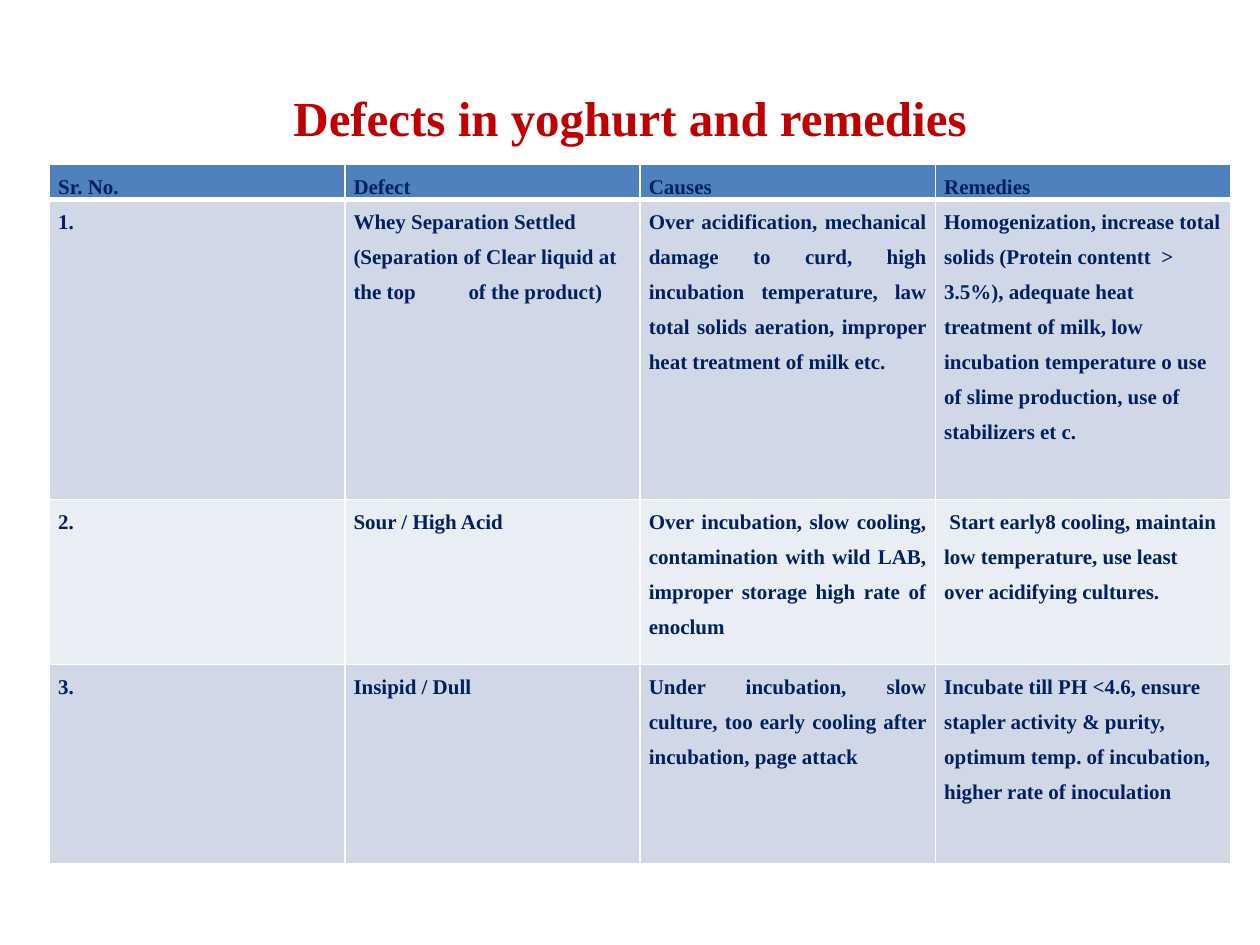
from typing import NamedTuple

from lxml import etree
from pptx import Presentation
from pptx import util as u
from pptx.dml.color import RGBColor
from pptx.enum import text
from pptx.oxml.ns import qn

COLORS = {
    "title": "C00000",
    "text": "002060",
    "header": "4F81BD",
    "band_dark": "D0D8E8",
    "band_light": "E9EDF4",
    "border": "FFFFFF",
}
FONT = "Times New Roman"
COLUMN_WIDTH = 168.75
TAB_STOP = 65.7


class TableRow(NamedTuple):
    height: float
    fill: str
    number: str
    defect: str
    causes: str
    remedies: str


ROWS = [
    TableRow(19.4, "header", "Sr. No.", "Defect", "Causes", "Remedies"),
    TableRow(
        171.4, "band_dark", "1.",
        "Whey Separation Settled (Separation of Clear liquid at the top\tof the product)",
        "Over acidification, mechanical damage to curd, high incubation temperature, "
        "law total solids aeration, improper heat treatment of milk etc. ",
        "Homogenization, increase total solids (Protein contentt  > 3.5%), adequate heat "
        "treatment of milk, low incubation temperature o use of slime production, "
        "use of stabilizers et c.",
    ),
    TableRow(
        94.3, "band_light", "2.", "Sour / High Acid",
        "Over incubation, slow cooling, contamination with wild LAB, improper storage "
        "high rate of enoclum ",
        " Start early8 cooling, maintain low temperature, use least over acidifying cultures.",
    ),
    TableRow(
        113.8, "band_dark", "3.", "Insipid / Dull",
        "Under incubation, slow culture, too early cooling after incubation, page attack",
        "Incubate till PH <4.6, ensure stapler activity & purity, optimum temp. of "
        "incubation, higher rate of inoculation",
    ),
]
CAUSES_COLUMN = 2


def format_runs(paragraph, size: float, color: str) -> None:
    for run in paragraph.runs:
        run.font.name = FONT
        run.font.size = u.Pt(size)
        run.font.bold = True
        run.font.color.rgb = RGBColor.from_string(COLORS[color])


def add_tab_stop(paragraph, position: float) -> None:
    tab_list = etree.SubElement(paragraph._p.get_or_add_pPr(), qn("a:tabLst"))
    etree.SubElement(tab_list, qn("a:tab"), pos=str(u.Pt(position)), algn="l")


def set_borders(cell, widths: dict[str, float]) -> None:
    properties = cell._tc.get_or_add_tcPr()
    for side, width in widths.items():
        line = etree.SubElement(properties, qn(f"a:ln{side}"), w=str(u.Pt(width)))
        fill = etree.SubElement(line, qn("a:solidFill"))
        etree.SubElement(fill, qn("a:srgbClr"), val=COLORS["border"])


def fill_cell(cell, content: str, fill: str, justified: bool) -> None:
    cell.margin_left = cell.margin_right = u.Pt(5)
    cell.margin_top = cell.margin_bottom = u.Pt(0)
    cell.fill.solid()
    cell.fill.fore_color.rgb = RGBColor.from_string(COLORS[fill])
    paragraph = cell.text_frame.paragraphs[0]
    paragraph.text = content
    paragraph.line_spacing = 1.5
    paragraph.alignment = text.PP_ALIGN.JUSTIFY if justified else text.PP_ALIGN.LEFT
    if "\t" in content:
        add_tab_stop(paragraph, TAB_STOP)
    format_runs(paragraph, 12, "text")


def add_title(slide, content: str) -> None:
    title = slide.shapes.title
    title.left, title.top = u.Pt(36), u.Pt(21.6)
    title.width, title.height = u.Pt(648), u.Pt(90)
    title.text_frame.text = content
    title.text_frame.vertical_anchor = text.MSO_ANCHOR.MIDDLE
    paragraph = title.text_frame.paragraphs[0]
    paragraph.alignment = text.PP_ALIGN.CENTER
    format_runs(paragraph, 28, "title")


def add_defect_table(slide, rows: list[TableRow]) -> None:
    column_count = 4
    table = slide.shapes.add_table(
        len(rows), column_count, u.Pt(28.3), u.Pt(94),
        u.Pt(COLUMN_WIDTH * column_count), u.Pt(sum(row.height for row in rows)),
    ).table
    for column in table.columns:
        column.width = u.Pt(COLUMN_WIDTH)
    for row_index, row in enumerate(rows):
        table.rows[row_index].height = u.Pt(row.height)
        # The rule below the header is heavier than the other borders
        borders = {"L": 1, "R": 1, "T": 3 if row_index == 1 else 1,
                   "B": 3 if row_index == 0 else 1}
        contents = (row.number, row.defect, row.causes, row.remedies)
        for column_index, content in enumerate(contents):
            cell = table.cell(row_index, column_index)
            set_borders(cell, borders)
            justified = row_index > 0 and column_index == CAUSES_COLUMN
            fill_cell(cell, content, row.fill, justified)


def main() -> None:
    presentation = Presentation()
    presentation.slide_width, presentation.slide_height = u.Pt(720), u.Pt(540)
    slide = presentation.slides.add_slide(presentation.slide_layouts[5])
    add_title(slide, "Defects in yoghurt and remedies")
    add_defect_table(slide, ROWS)
    presentation.save("out.pptx")


if __name__ == "__main__":
    main()
